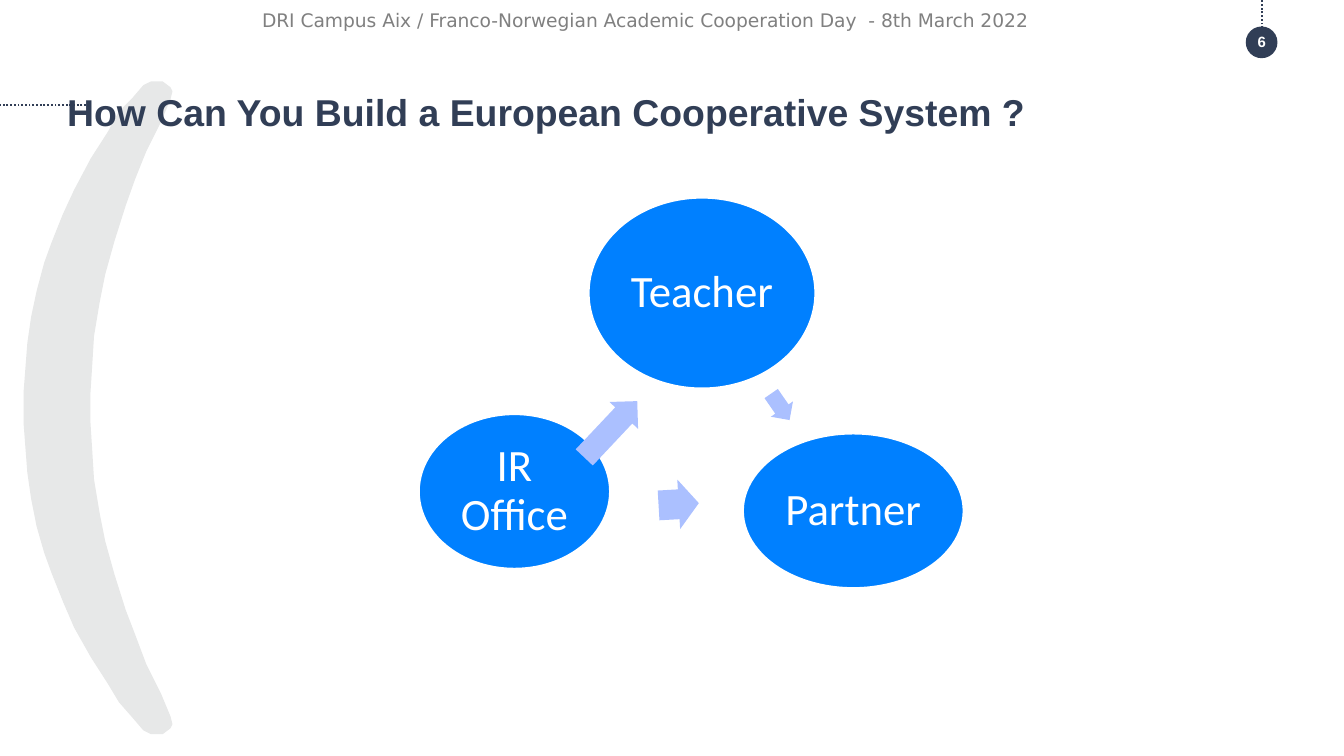
from pptx import Presentation
from pptx.dml.color import RGBColor
from pptx.enum.dml import MSO_LINE
from pptx.enum.shapes import MSO_CONNECTOR, MSO_SHAPE
from pptx.enum.text import MSO_ANCHOR, PP_ALIGN
from pptx.oxml.ns import qn
from pptx.util import Pt
from lxml import etree

NAVY = RGBColor(0x31, 0x3E, 0x56)
GREY = RGBColor(0x80, 0x80, 0x80)
PALE = RGBColor(0xE7, 0xE8, 0xE8)
BLUE = RGBColor(0x00, 0x80, 0xFF)
LILAC = RGBColor(0xAB, 0xC0, 0xFF)
WHITE = RGBColor(0xFF, 0xFF, 0xFF)
OVAL, ARROW = MSO_SHAPE.OVAL, MSO_SHAPE.RIGHT_ARROW
STRAIGHT, DOTTED = MSO_CONNECTOR.STRAIGHT, MSO_LINE.ROUND_DOT
TOP, MIDDLE = MSO_ANCHOR.TOP, MSO_ANCHOR.MIDDLE
LEFT, CENTER = PP_ALIGN.LEFT, PP_ALIGN.CENTER

# Content: text, box (left, top, width, height), font, size, bold, colour, align, anchor
TEXTS = [
    ("How Can You Build a European Cooperative System ?",
     (36, 47.5, 648, 38), "Arial", 20, True, NAVY, LEFT, TOP),
    ("DRI Campus Aix / Franco-Norwegian Academic Cooperation Day  - 8th March 2022",
     (140.4, 0, 518, 21), "DejaVu Sans", 10, False, GREY, LEFT, MIDDLE),
    ("6", (658, 18, 36, 8.6), "Arial", 8, True, WHITE, CENTER, MIDDLE),
]
ACTORS = [
    ("Teacher", (314.9, 105.4, 122.4, 103.2)),
    ("Partner", (397.5, 231.8, 119.2, 83.8)),
    ("IR Office", (223.9, 221.4, 103.4, 83.8)),
]
# Box and rotation in degrees
ARROWS = [
    ((409.4, 210.8, 17.3, 14.4), 55.2),
    ((352.8, 256.9, 21.6, 26.6), -3.3),
    ((306.5, 219.5, 41.4, 21), -46.7),
]
DOTTED_LINES = [(676.1, 15.1, 676.1, 0), (46.1, 56.2, 0, 56.2)]

# Upper half of the crescent: outer edge from tip to middle, inner edge back up
MID_Y = 218.5
OUTER = [(92, 49), (91.4, 46.8), (87.1, 43.9), (81.4, 43.9), (77, 46.1),
         (70.6, 52.6), (64.1, 60.5), (57.6, 70.6), (49, 85), (40.3, 101.5),
         (33.8, 115.2), (28.1, 129.6), (24.5, 141.1), (20.2, 155.5),
         (17.3, 169.9), (15.1, 184.3), (13.7, 197.3), (13, 210.2)]
INNER = [(48.2, 212.4), (49, 195.8), (50.4, 180), (53.3, 162), (56.2, 146.9),
         (61.2, 128.9), (67, 110.2), (72, 96.5), (78.5, 80.6), (85.7, 64.8),
         (90.7, 52.6)]

prs = Presentation()
prs.slide_width, prs.slide_height = Pt(720), Pt(405)
s = prs.slides.add_slide(prs.slide_layouts[6])


def mirror(points):
    return [(x, 2 * MID_Y - y) for x, y in reversed(points)]


def paint(sp, color, line=None, width=0):
    sp.shadow.inherit = False
    sp.fill.solid()
    sp.fill.fore_color.rgb = color
    if line is None:
        sp.line.fill.background()
    else:
        sp.line.color.rgb = line
        sp.line.width = Pt(width)


def add_shape(kind, box):
    return s.shapes.add_shape(kind, *map(Pt, box))


def write(sp, text, font, size, bold, color, align, anchor, inset):
    tf = sp.text_frame
    tf.word_wrap = True
    tf.vertical_anchor = anchor
    tf.margin_left = tf.margin_right = Pt(inset)
    tf.margin_top = tf.margin_bottom = Pt(min(inset, 2))
    p = tf.paragraphs[0]
    p.alignment = align
    r = p.add_run()
    r.text = text
    r.font.name, r.font.size, r.font.bold = font, Pt(size), bold
    r.font.color.rgb = color
    return p


# Crescent
outline = OUTER + mirror(OUTER) + mirror(INNER) + INNER
builder = s.shapes.build_freeform(*outline[0], scale=Pt(1))
builder.add_line_segments(outline[1:], close=True)
paint(builder.convert_to_shape(), PALE, PALE, 0.75)

# Page number disc and dotted lines
paint(add_shape(OVAL, (667.4, 14.2, 17, 17)), NAVY)
for ends in DOTTED_LINES:
    c = s.shapes.add_connector(STRAIGHT, *map(Pt, ends))
    c.line.color.rgb = NAVY
    c.line.width = Pt(1)
    c.line.dash_style = DOTTED
    etree.SubElement(c._element.spPr, qn("a:effectLst"))

# Title, header and page number
for text, box, *style in TEXTS:
    inset = 0 if style[-1] == TOP else 0 if text == "6" else 0
    write(s.shapes.add_textbox(*map(Pt, box)), text, *style, inset)

# Actors and the arrows between them
for name, box in ACTORS:
    sp = add_shape(OVAL, box)
    paint(sp, BLUE, WHITE, 2)
    p = write(sp, name, "Calibri", 24, False, WHITE, CENTER, MIDDLE, 2)
    p.line_spacing = 0.9
for box, angle in ARROWS:
    sp = add_shape(ARROW, box)
    sp.adjustments[0], sp.adjustments[1] = 0.6, 0.5
    sp.rotation = angle
    paint(sp, LILAC)

prs.save("out.pptx")
